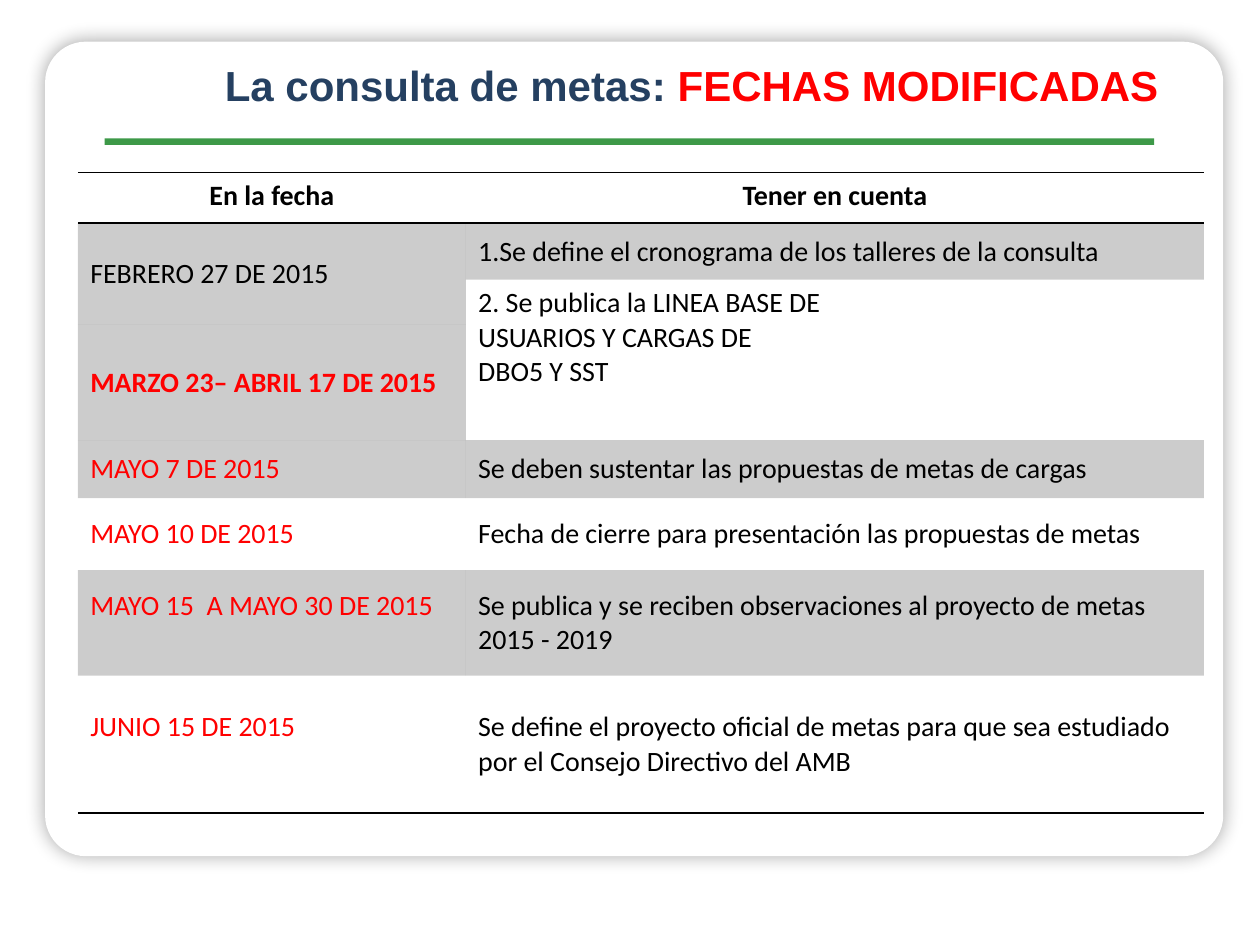
from lxml import etree
from pptx import Presentation
from pptx import util as u
from pptx.dml.color import RGBColor
from pptx.enum import shapes, text
from pptx.oxml import ns

BLACK, WHITE, RED, NAVY, GREEN = "000000", "FFFFFF", "FF0000", "254061", "3D9948"
TITLE = [("La consulta de metas: ", NAVY), ("FECHAS MODIFICADAS ", RED)]
COLUMN_WIDTHS = [7.82, 7.44, 7.44]
ROW_HEIGHTS = [1.02, 1.14, 0.91, 1.37, 0.94, 1.17, 1.45, 2.13, 2.77]
MERGES = [(0, 1, 0, 2), (1, 0, 2, 0), (1, 1, 1, 2), (2, 1, 3, 1), (2, 2, 3, 2),
          (3, 0, 4, 0)] + [(row, 1, row, 2) for row in range(5, 9)]
DATES = {
    0: ("En la fecha", BLACK),
    1: ("FEBRERO 27 DE 2015", BLACK),
    3: ("MARZO 23– ABRIL 17 DE 2015", RED),
    5: ("MAYO 7 DE 2015", RED),
    6: ("MAYO 10 DE 2015", RED),
    7: ("MAYO 15  A MAYO 30 DE 2015", RED),
    8: ("JUNIO 15 DE 2015", RED),
}
TASKS = {
    0: "Tener en cuenta",
    1: "1.Se define el cronograma de los talleres de la consulta",
    2: "2. Se publica la LINEA BASE DE USUARIOS Y CARGAS DE DBO5 Y SST",
    5: "Se deben sustentar las propuestas de metas de cargas",
    6: "Fecha de cierre para presentación las propuestas de metas",
    7: "Se publica y se reciben observaciones al proyecto de metas 2015 - 2019",
    8: "Se define el proyecto oficial de metas para que sea estudiado por el Consejo Directivo del AMB",
}
SHADED = {(1, 0), (1, 1), (3, 0), (5, 0), (5, 1), (7, 0), (7, 1)}
BOLD = {(0, 0), (0, 1), (3, 0)}
FIRST_LINE_DATES = {(7, 0), (8, 0)}
BORDERS = {0: ("lnT", "lnB"), 8: ("lnB",)}
PLAIN_TABLE = "{2D5ABB26-0587-4C30-8999-92F81FD0307C}"


def color(value):
    return RGBColor.from_string(value)


def add_element(parent, tag, **attributes):
    return etree.SubElement(parent, ns.qn(tag), attributes)


def add_run(paragraph, words, font_name, size, hue, bold):
    run = paragraph.add_run()
    run.text = words
    run.font.name, run.font.size, run.font.bold = font_name, u.Pt(size), bold
    run.font.color.rgb = color(hue)


def add_block(slide, kind, box, fill):
    shape = slide.shapes.add_shape(kind, *map(u.Cm, box))
    shape.shadow.inherit = False
    shape.fill.solid()
    shape.fill.fore_color.rgb = color(fill)
    shape.line.fill.background()
    return shape


def add_panel(slide):
    panel = add_block(slide, shapes.MSO_SHAPE.ROUNDED_RECTANGLE, (0.91, 0.84, 23.75, 16.42), WHITE)
    panel.adjustments[0] = 0.05
    effects = panel.element.spPr.find(ns.qn("a:effectLst"))
    shadow = add_element(effects, "a:outerShdw", blurRad=str(u.Pt(10.8)), dist="0", dir="5400000")
    add_element(add_element(shadow, "a:srgbClr", val=BLACK), "a:alpha", val="35000")


def format_title(title):
    title.element.getparent().append(title.element)
    title.left, title.top, title.width, title.height = map(u.Cm, (3.86, 1.07, 20.4, 1.27))
    frame = title.text_frame
    frame.word_wrap = True
    frame.auto_size = text.MSO_AUTO_SIZE.SHAPE_TO_FIT_TEXT
    frame.vertical_anchor = text.MSO_ANCHOR.TOP
    paragraph = frame.paragraphs[0]
    paragraph.alignment = text.PP_ALIGN.CENTER
    for words, hue in TITLE:
        add_run(paragraph, words, "Arial", 24, hue, True)


def format_cell(cell, row, column):
    properties = cell._tc.get_or_add_tcPr()
    for side in BORDERS.get(row, ()):
        line = add_element(properties, f"a:{side}", w=str(u.Pt(1)))
        add_element(add_element(line, "a:solidFill"), "a:srgbClr", val=BLACK)
    cell.fill.background()
    if (row, column) in SHADED:
        cell.fill.solid()
        cell.fill.fore_color.rgb = color(BLACK)
        add_element(properties.find(".//" + ns.qn("a:srgbClr")
                                    if row not in BORDERS else ns.qn("a:solidFill") + "/*"),
                    "a:alpha", val="20000")
    cell.margin_left = cell.margin_right = u.Cm(0.25)
    cell.margin_top = cell.margin_bottom = u.Cm(0.13)
    if (row, column) in FIRST_LINE_DATES:
        cell.margin_bottom = u.Cm(0.82)
    cell.vertical_anchor = text.MSO_ANCHOR.MIDDLE if row else text.MSO_ANCHOR.TOP
    paragraph = cell.text_frame.paragraphs[0]
    if row == 0:
        paragraph.alignment = text.PP_ALIGN.CENTER
    entries = (DATES, {key: (words, BLACK) for key, words in TASKS.items()}, {})
    if row in entries[column]:
        words, hue = entries[column][row]
        add_run(paragraph, words, "Calibri", 16, hue, (row, column) in BOLD)
    else:
        add_element(paragraph._p, "a:endParaRPr", sz="1600")


def add_schedule(slide):
    frame = slide.shapes.add_table(len(ROW_HEIGHTS), len(COLUMN_WIDTHS), u.Cm(1.57), u.Cm(3.48),
                                   u.Cm(sum(COLUMN_WIDTHS)), u.Cm(sum(ROW_HEIGHTS)))
    table = frame.table
    table.first_row = table.horz_banding = False
    table._tbl.tblPr.find(ns.qn("a:tableStyleId")).text = PLAIN_TABLE
    for column, width in zip(table.columns, COLUMN_WIDTHS):
        column.width = u.Cm(width)
    for row, height in zip(table.rows, ROW_HEIGHTS):
        row.height = u.Cm(height)
    for top, left, bottom, right in MERGES:
        table.cell(top, left).merge(table.cell(bottom, right))
    for row in range(len(ROW_HEIGHTS)):
        for column in range(len(COLUMN_WIDTHS)):
            format_cell(table.cell(row, column), row, column)


def main():
    """Build the slide with the modified dates of the targets consultation."""
    presentation = Presentation()
    presentation.slide_width, presentation.slide_height = u.Cm(25.4), u.Cm(19.05)
    slide = presentation.slides.add_slide(presentation.slide_layouts[5])
    add_panel(slide)
    add_block(slide, shapes.MSO_SHAPE.RECTANGLE, (2.11, 2.79, 21.16, 0.13), GREEN)
    format_title(slide.shapes.title)
    add_schedule(slide)
    presentation.save("out.pptx")


if __name__ == "__main__":
    main()
